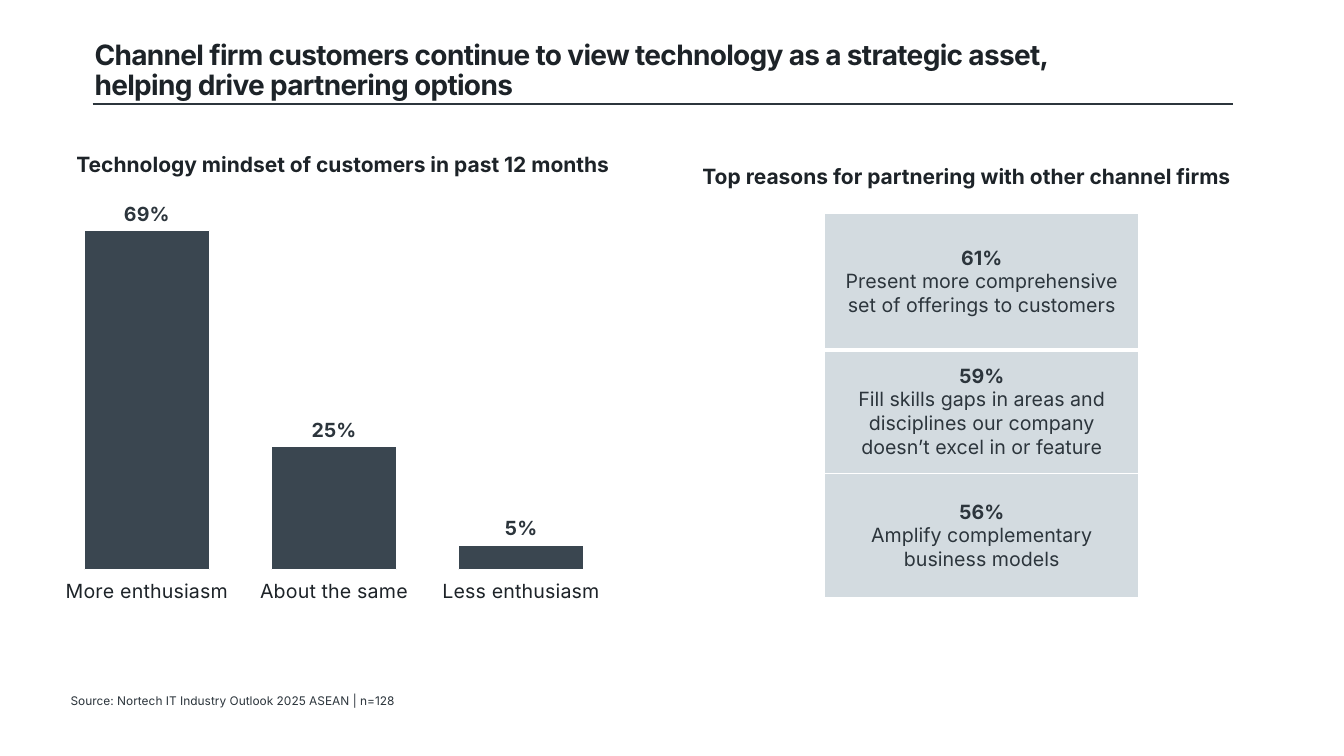
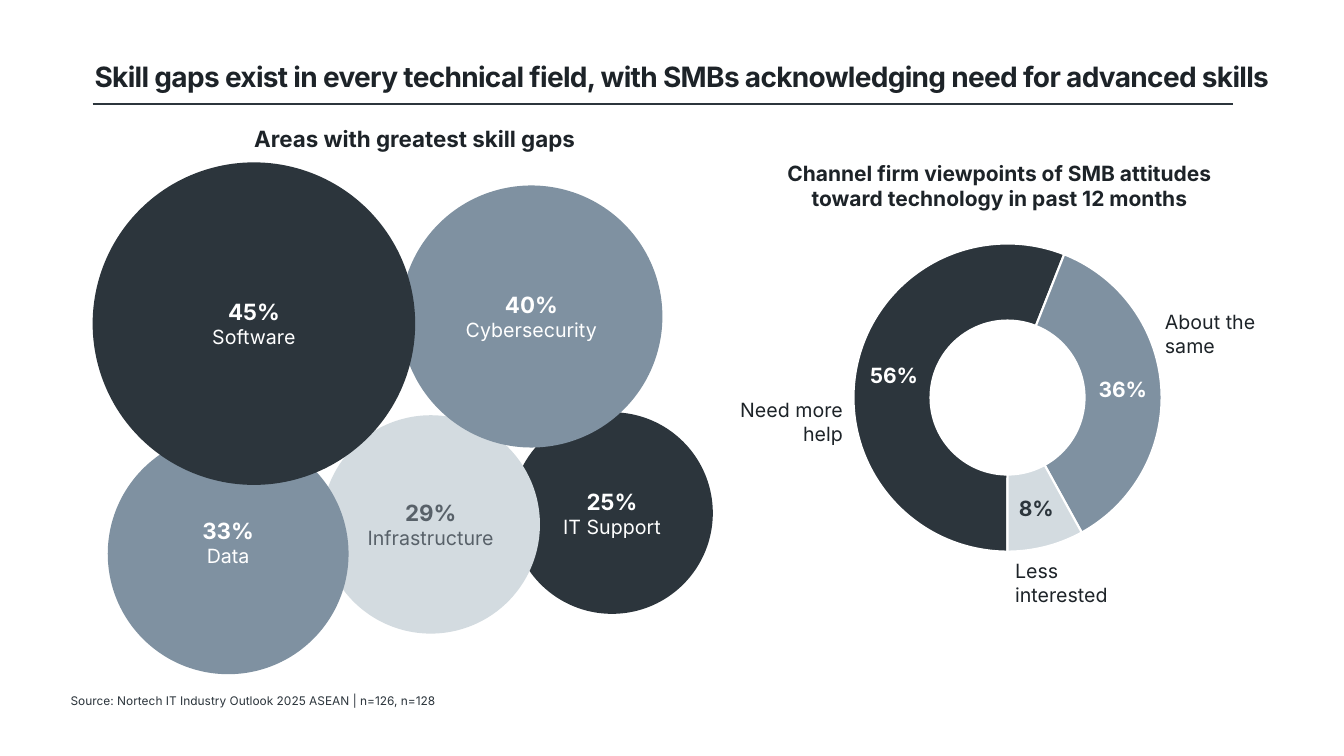
from lxml import etree
from pptx import Presentation
from pptx.chart.data import CategoryChartData
from pptx.dml.color import RGBColor
from pptx.enum import chart as ch, shapes, text
from pptx.oxml import parse_xml
from pptx.oxml.ns import nsdecls, qn
from pptx.util import Pt

# Shared style
FONT, CHART_FONT = "Inter", "Roboto"
INK = RGBColor(0x1D, 0x23, 0x28)
DARK = RGBColor(0x2C, 0x35, 0x3C)
BAR = RGBColor(0x3A, 0x46, 0x50)
STEEL = RGBColor(0x7F, 0x91, 0xA1)
PALE = RGBColor(0xD3, 0xDB, 0xE0)
GREY = RGBColor(0x58, 0x61, 0x69)
WHITE = RGBColor(0xFF, 0xFF, 0xFF)
LEFT, CENTER, RIGHT = text.PP_ALIGN.LEFT, text.PP_ALIGN.CENTER, text.PP_ALIGN.RIGHT
MIDDLE = text.MSO_ANCHOR.MIDDLE

# Content; boxes are (left, top, width, height) in points
MINDSET = {
    "title": "Channel firm customers continue to view technology as a strategic asset, "
             "helping drive partnering options",
    "title_box": (60.5, 26, 731.5, 50.4),
    "source": "Source: Nortech IT Industry Outlook 2025 ASEAN | n=128",
    "headings": [
        ("Technology mindset of customers in past 12 months", 15, (38, 105, 414, 25)),
        ("Top reasons for partnering with other channel firms", 15, (485.5, 113.2, 410, 25)),
    ],
}
MINDSET_SHARES = {"More enthusiasm": 0.69, "About the same": 0.25, "Less enthusiasm": 0.05}
REASONS = [  # share, reason, row height
    ("61%", "Present more comprehensive set of offerings to customers", 97.2),
    ("59%", "Fill skills gaps in areas and disciplines our company doesn’t excel in or feature", 88.5),
    ("56%", "Amplify complementary business models", 88.5),
]

SKILLS = {
    "title": "Skill gaps exist in every technical field, with SMBs acknowledging need for advanced skills",
    "title_box": (60.5, 31, 857, 50.4),
    "source": "Source: Nortech IT Industry Outlook 2025 ASEAN | n=126, n=128",
    "headings": [
        ("Areas with greatest skill gaps", 16, (100, 85.5, 392.5, 27)),
        ("Channel firm viewpoints of SMB attitudes toward technology in past 12 months", 15,
         (553.5, 111, 321, 44)),
    ],
}
BUBBLES = [  # share, field, left, top, diameter, fill, text colour, text lift
    ("25%", "IT Support", 365.2, 294.5, 144, DARK, WHITE, 0),
    ("29%", "Infrastructure", 229.7, 296.6, 156, PALE, GREY, 0),
    ("33%", "Data", 77, 309.6, 172, STEEL, WHITE, 17),
    ("40%", "Cybersecurity", 286, 132.5, 187.2, STEEL, WHITE, 0),
    ("45%", "Software", 66.2, 116, 230.4, DARK, WHITE, 0),
]
ATTITUDES = [  # label, share, fill, value colour, label left, label top, alignment
    ("Need more help", 0.56, DARK, WHITE, 509.8, 280.8, RIGHT),
    ("About the same", 0.36, STEEL, WHITE, 825, 218, LEFT),
    ("Less interested", 0.08, PALE, DARK, 718, 396, LEFT),
]


def points(*values):
    return [Pt(value) for value in values]


def write(frame, lines, size=14, color=INK, bold=False, align=LEFT, anchor=None,
          spacing=None, tracking=None):
    """Fill a text frame; a line is a string or (string, size, bold)."""
    frame.word_wrap = True
    if anchor is not None:
        frame.vertical_anchor = anchor
    for index, line in enumerate(lines):
        words, line_size, line_bold = (line, size, bold) if isinstance(line, str) else line
        para = frame.paragraphs[0] if index == 0 else frame.add_paragraph()
        para.alignment = align
        if spacing:
            para.line_spacing = spacing
        span = para.add_run()
        span.text = words
        style_font(span.font, line_size, color, line_bold)
        if tracking:
            span._r.get_or_add_rPr().set("spc", str(round(tracking * 100)))


def style_font(font, size, color, bold=False, name=FONT):
    font.name, font.size, font.bold = name, Pt(size), bold
    font.color.rgb = color


def add_label(page, box, words, **style):
    frame = page.shapes.add_textbox(*points(*box)).text_frame
    write(frame, [words], **style)
    return frame


def start_page(deck, content):
    """Add a slide with its title, rule, source line and headings."""
    page = deck.slides.add_slide(deck.slide_layouts[6])
    add_label(page, content["title_box"], content["title"], size=20, bold=True,
              anchor=MIDDLE, spacing=0.9, tracking=-0.5)
    rule = page.shapes.add_connector(shapes.MSO_CONNECTOR.STRAIGHT,
                                     *points(66.2, 74.2, 880.6, 74.2))
    rule.line.color.rgb, rule.line.width = DARK, Pt(1)
    etree.SubElement(rule._element.spPr, qn("a:effectLst"))
    source = add_label(page, (50.4, 493.2, 504, 14.4), content["source"],
                       size=8.5, color=DARK, anchor=MIDDLE)
    source.margin_left = source.margin_right = source.margin_top = source.margin_bottom = 0
    for words, size, box in content["headings"]:
        add_label(page, box, words, size=size, bold=True, align=CENTER)
    return page


def add_chart(page, kind, box, shares, plot_box, label_size):
    """Add a one-series percentage chart with a fixed plot area."""
    data = CategoryChartData(number_format="0%")
    data.categories = list(shares)
    data.add_series("Share", list(shares.values()))
    chart = page.shapes.add_chart(kind, *points(*box), data).chart
    chart.has_title = chart.has_legend = False
    style_font(chart.font, 14, GREY, name=CHART_FONT)

    area = chart._chartSpace.chart.plotArea
    for layout in area.findall(qn("c:layout")):
        area.remove(layout)
    sides = "".join(f'<c:{tag} val="{value}"/>' for tag, value in zip("xywh", plot_box))
    area.insert(0, parse_xml(
        f'<c:layout {nsdecls("c")}><c:manualLayout><c:layoutTarget val="inner"/>'
        f'<c:xMode val="edge"/><c:yMode val="edge"/>{sides}</c:manualLayout></c:layout>'))

    plot = chart.plots[0]
    plot.has_data_labels = True
    labels = plot.data_labels
    labels.show_value, labels.show_percentage = True, False
    labels.number_format, labels.number_format_is_linked = "0%", False
    style_font(labels.font, label_size, DARK, True)
    return chart, plot


def add_mindset_chart(page):
    chart, plot = add_chart(page, ch.XL_CHART_TYPE.COLUMN_CLUSTERED, (38.2, 144.7, 401, 327),
                            MINDSET_SHARES, (0, 0.03, 1, 0.77), 14)
    plot.gap_width, plot.vary_by_categories = 49, False
    plot.data_labels.position = ch.XL_LABEL_POSITION.OUTSIDE_END
    bars = plot.series[0].format
    bars.fill.solid()
    bars.fill.fore_color.rgb = BAR
    bars.line.color.rgb, bars.line.width = WHITE, Pt(0.75)
    values, names = chart.value_axis, chart.category_axis
    values.minimum_scale, values.maximum_scale = 0, 0.71
    values.has_major_gridlines = values.visible = False
    names.format.line.fill.background()
    style_font(names.tick_labels.font, 14, INK)


def add_border(cell, side, width):
    edge = etree.SubElement(cell._tc.get_or_add_tcPr(), qn(f"a:{side}"), w=str(Pt(width)))
    fill = etree.SubElement(edge, qn("a:solidFill"))
    etree.SubElement(fill, qn("a:srgbClr"), val=str(WHITE))


def add_reasons_table(page):
    height = sum(reason[2] for reason in REASONS)
    table = page.shapes.add_table(len(REASONS), 1, *points(589, 152.6, 224.6, height)).table
    table.first_row = table.horz_banding = False
    for index, (share, reason, row_height) in enumerate(REASONS):
        table.rows[index].height = Pt(row_height)
        cell = table.cell(index, 0)
        for side in ("lnL", "lnR", "lnT", "lnB"):
            thick = (index, side) in ((0, "lnB"), (1, "lnT"))
            add_border(cell, side, 3 if thick else 1)
        cell.fill.solid()
        cell.fill.fore_color.rgb = PALE
        cell.vertical_anchor = MIDDLE
        write(cell.text_frame, [(share, 14, True), reason], color=DARK, align=CENTER)


def add_bubbles(page):
    for share, field, left, top, size, fill, color, lift in BUBBLES:
        bubble = page.shapes.add_shape(shapes.MSO_SHAPE.OVAL, *points(left, top, size, size))
        bubble.shadow.inherit = False
        bubble.fill.solid()
        bubble.fill.fore_color.rgb = fill
        bubble.line.fill.background()
        frame = bubble.text_frame
        frame.margin_bottom = Pt(3.6 + lift)
        write(frame, [(share, 16, True), field], color=color, align=CENTER, anchor=MIDDLE)


def add_attitudes_chart(page):
    shares = {attitude[0]: attitude[1] for attitude in ATTITUDES}
    chart, plot = add_chart(page, ch.XL_CHART_TYPE.DOUGHNUT, (542.2, 157, 355, 259.2),
                            shares, (0.19, 0.06, 0.62, 0.86), 15)
    ring = chart._chartSpace.chart.plotArea.find(qn("c:doughnutChart"))
    ring.find(qn("c:firstSliceAng")).set("val", "180")
    ring.find(qn("c:holeSize")).set("val", "54")
    for index, (label, _, fill, color, left, top, align) in enumerate(ATTITUDES):
        point = plot.series[0].points[index]
        point.format.fill.solid()
        point.format.fill.fore_color.rgb = fill
        point.format.line.color.rgb, point.format.line.width = WHITE, Pt(1.5)
        style_font(point.data_label.font, 15, color, True)
        add_label(page, (left, top, 99.4, 41), label, align=align)


def main():
    deck = Presentation()
    deck.slide_width, deck.slide_height = points(960, 540)

    # Customer mindset and partnering reasons
    page = start_page(deck, MINDSET)
    add_mindset_chart(page)
    add_reasons_table(page)

    # Skill gaps and customer attitudes
    page = start_page(deck, SKILLS)
    add_bubbles(page)
    add_attitudes_chart(page)

    deck.save("out.pptx")


if __name__ == "__main__":
    main()
